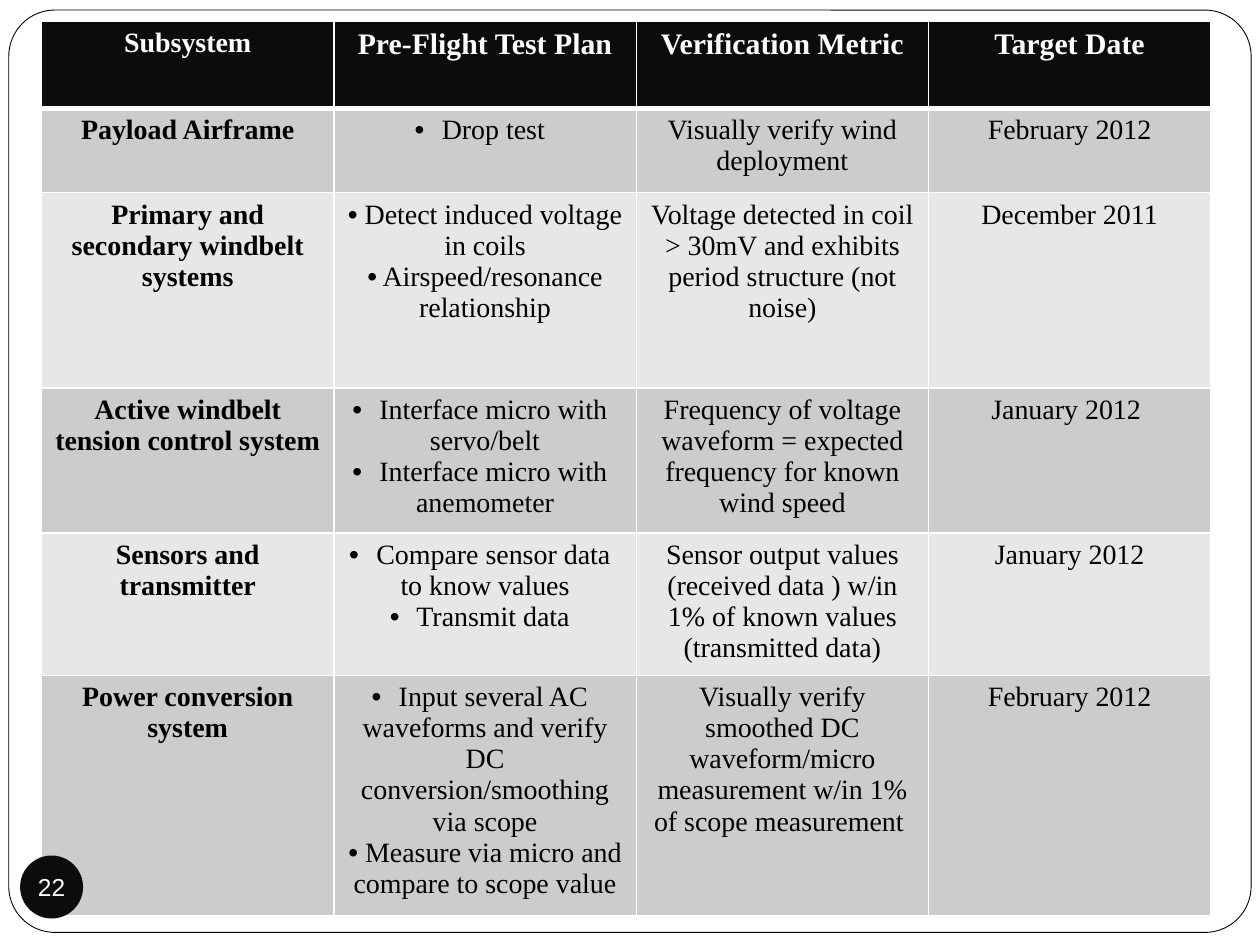
"""Build the pre-flight test plan slide: a framed table and a page badge."""
import pptx
import pptx.util
import pptx.dml.color
import pptx.enum.shapes
import pptx.enum.text
import pptx.oxml
import pptx.oxml.ns
from lxml import etree

Inches = pptx.util.Inches
Pt = pptx.util.Pt
Color = pptx.dml.color.RGBColor
Shape = pptx.enum.shapes.MSO_SHAPE
CENTER = pptx.enum.text.PP_ALIGN.CENTER
BLACK = Color(0, 0, 0)
INK = Color(0x0C, 0x0C, 0x0C)
WHITE = Color(255, 255, 255)
DARK = Color(0xCC, 0xCC, 0xCC)
LIGHT = Color(0xE7, 0xE7, 0xE7)

COLS = [2.32, 2.4, 2.32, 2.24]
ROWS = [0.69, 0.67, 1.55, 1.15, 1.13, 1.91]
TEXT = [
    ["Subsystem", "Pre-Flight Test Plan", "Verification Metric", "Target Date"],
    ["Payload Airframe", " Drop test",
     "Visually verify wind deployment", "February 2012"],
    ["Primary and secondary windbelt systems",
     " Detect induced voltage in coils\n Airspeed/resonance relationship",
     "Voltage detected in coil > 30mV and exhibits period structure (not noise)",
     "December 2011"],
    ["Active windbelt tension control system",
     " Interface micro with servo/belt\n Interface micro with anemometer",
     "Frequency of voltage waveform = expected frequency for known wind speed",
     "January 2012 "],
    ["Sensors and transmitter",
     " Compare sensor data to know values\n Transmit data",
     "Sensor output values (received data ) w/in 1% of known values (transmitted data)",
     "January 2012"],
    ["Power conversion system",
     " Input several AC waveforms and verify DC conversion/smoothing via scope\n"
     " Measure via micro and compare to scope value",
     "Visually verify smoothed DC waveform/micro measurement w/in 1% of scope measurement ",
     "February 2012"],
]
TIGHT = (" Detect", " Airspeed", " Measure")


def style(para, size, face, color, bold=False):
    """Centre a paragraph and set its font."""
    para.alignment = CENTER
    for run in para.runs:
        font = run.font
        font.size, font.name, font.bold = Pt(size), face, bold
        font.color.rgb = color


def edge(cell, side, width):
    """Draw one white cell border."""
    cell._tc.get_or_add_tcPr().append(pptx.oxml.parse_xml(
        f'<a:{side} {pptx.oxml.ns.nsdecls("a")} w="{Pt(width)}"><a:solidFill>'
        f'<a:srgbClr val="{WHITE}"/></a:solidFill></a:{side}>'))


deck = pptx.Presentation()
deck.slide_width, deck.slide_height = Inches(10), Inches(7.5)
slide = deck.slides.add_slide(deck.slide_layouts[6])

frame = slide.shapes.add_shape(
    Shape.ROUNDED_RECTANGLE, Inches(0.07), Inches(0.08), Inches(9.86), Inches(7.32))
frame.adjustments[0] = 0.05
frame.shadow.inherit = False
frame.fill.solid()
frame.fill.fore_color.rgb = WHITE
frame.line.color.rgb = BLACK
frame.line.width = Pt(0.5)

grid = slide.shapes.add_table(
    len(ROWS), len(COLS), Inches(0.33), Inches(0.17),
    Inches(sum(COLS)), Inches(sum(ROWS))).table
for col, width in zip(grid.columns, COLS):
    col.width = Inches(width)
for row, height in zip(grid.rows, ROWS):
    row.height = Inches(height)

for r, line in enumerate(TEXT):
    for c, words in enumerate(line):
        cell = grid.cell(r, c)
        cell.text_frame.text = words
        head = r == 0
        for side in ("lnL", "lnR", "lnT", "lnB"):
            thick = (head and side == "lnB") or (r == 1 and side == "lnT")
            edge(cell, side, 3 if thick else 1)
        cell.fill.solid()
        cell.fill.fore_color.rgb = INK if head else DARK if r % 2 else LIGHT
        for para in cell.text_frame.paragraphs:
            style(para, 17 if head and c else 16, "Times New Roman",
                  WHITE if head else BLACK, head or c == 0)
            if c == 1 and not head:
                props = para._p.get_or_add_pPr()
                props.set("marL", "0")
                props.set("indent", str(0 if para.text.startswith(TIGHT) else -Inches(0.16)))
                for tag, key, value in (("a:buFont", "typeface", "Arial"),
                                        ("a:buChar", "char", "•")):
                    etree.SubElement(props, pptx.oxml.ns.qn(tag)).set(key, value)

badge = slide.shapes.add_shape(
    Shape.OVAL, Inches(0.16), Inches(6.79), Inches(0.5), Inches(0.5))
badge.shadow.inherit = False
badge.fill.solid()
badge.fill.fore_color.rgb = INK
badge.line.fill.background()
box = badge.text_frame
box.text = "22"
box.word_wrap = False
box.vertical_anchor = pptx.enum.text.MSO_ANCHOR.MIDDLE
box.margin_left = box.margin_right = box.margin_top = box.margin_bottom = 0
style(box.paragraphs[0], 14, "Arial", WHITE)

deck.save("out.pptx")
